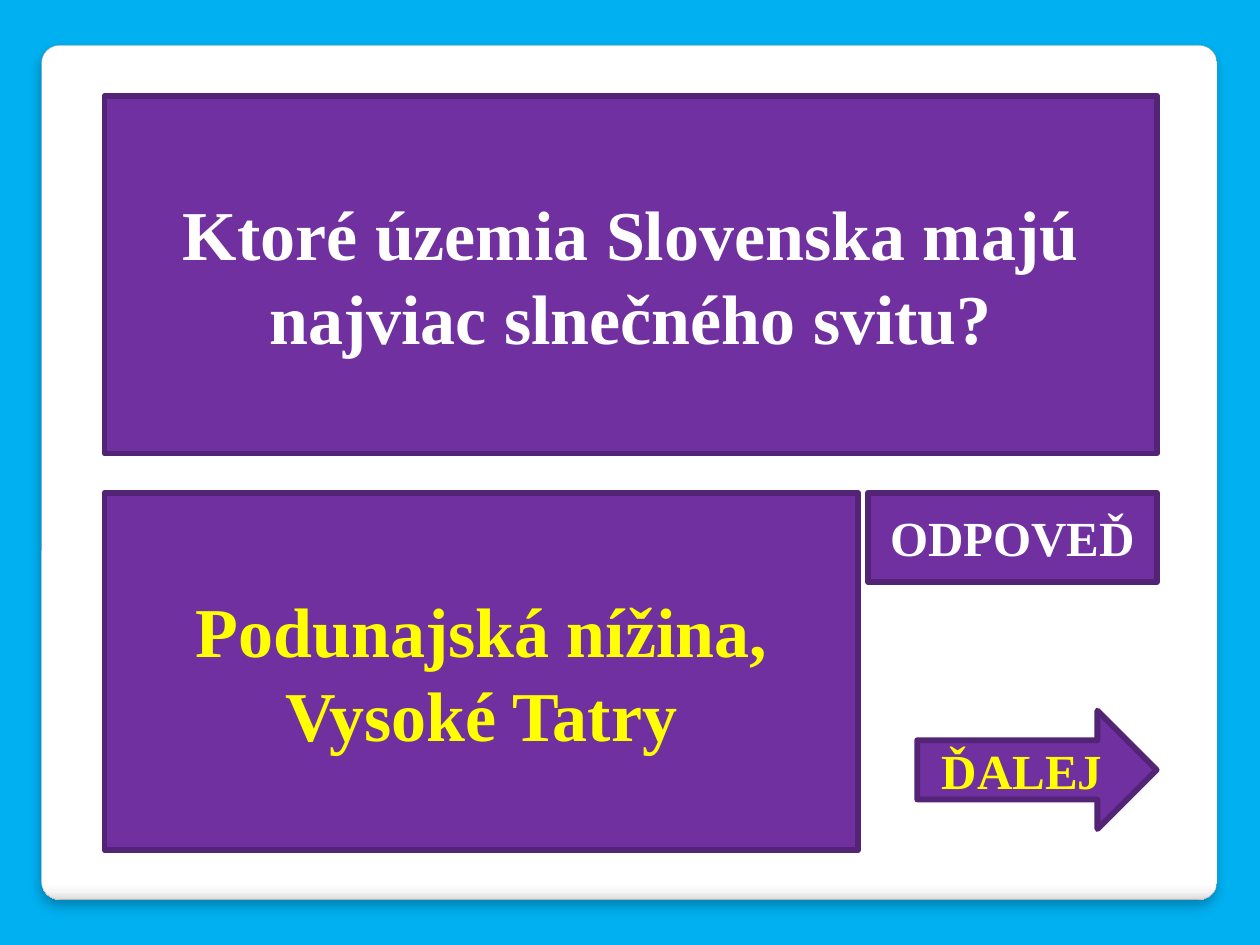
from lxml import etree
from pptx import Presentation
from pptx import util as u
from pptx.dml.color import RGBColor
from pptx.enum import shapes, text
from pptx.oxml.ns import qn

SKY = RGBColor(0x00, 0xB0, 0xF0)
PURPLE = RGBColor(0x70, 0x30, 0xA0)
DARK_PURPLE = RGBColor(0x53, 0x24, 0x76)
WHITE = RGBColor(0xFF, 0xFF, 0xFF)
YELLOW = RGBColor(0xFF, 0xFF, 0x00)
GRAY = RGBColor(0xA4, 0xA4, 0xA4)
BLACK = RGBColor(0x00, 0x00, 0x00)
PALE = RGBColor(0xF7, 0xF7, 0xF7)
SILVER = RGBColor(0xDA, 0xDA, 0xDA)

LEFT, RIGHT = 0.83, 9.18
QUESTION_TOP, ANSWER_TOP, BOX_HEIGHT = 0.76, 3.91, 2.84


def write_text(shape, content, size=40, color=WHITE, font="Times New Roman", bold=True):
    frame = shape.text_frame
    frame.word_wrap = True
    frame.vertical_anchor = text.MSO_ANCHOR.MIDDLE
    paragraph = frame.paragraphs[0]
    paragraph.alignment = text.PP_ALIGN.CENTER
    run = paragraph.add_run()
    run.text = content
    run.font.name = font
    run.font.size = u.Pt(size)
    run.font.bold = bold
    run.font.color.rgb = color


def add_color(parent, color):
    return etree.SubElement(parent, qn("a:srgbClr"), val=str(color))


class QuizSlide:
    def __init__(self, presentation, background):
        self.slide = presentation.slides.add_slide(presentation.slide_layouts[6])
        fill = self.slide.background.fill
        fill.solid()
        fill.fore_color.rgb = background

    def shape(self, kind, left, top, width, height, line, line_width):
        shape = self.slide.shapes.add_shape(
            kind, u.Inches(left), u.Inches(top), u.Inches(width), u.Inches(height)
        )
        shape.shadow.inherit = False
        shape.line.color.rgb = line
        shape.line.width = u.Pt(line_width)
        return shape

    def panel(self, left, top, width, height, stops):
        shape = self.shape(
            shapes.MSO_SHAPE.ROUNDED_RECTANGLE, left, top, width, height, GRAY, 0.16
        )
        shape.adjustments[0] = 0.021
        shape.fill.gradient()
        shape.fill.gradient_angle = 270
        properties = shape._element.spPr
        stop_list = properties.find(".//" + qn("a:gsLst"))
        for stop in list(stop_list):
            stop_list.remove(stop)
        for position, color in stops:
            add_color(
                etree.SubElement(stop_list, qn("a:gs"), pos=str(position * 1000)), color
            )
        shadow = etree.SubElement(
            properties.find(qn("a:effectLst")),
            qn("a:outerShdw"),
            blurRad=str(u.Pt(6)),
            dist=str(u.Pt(4)),
            dir="5400000",
            algn="ctr",
            rotWithShape="0",
        )
        etree.SubElement(add_color(shadow, BLACK), qn("a:alpha"), val="25000")

    def box(self, content, left, top, width, height,
            kind=shapes.MSO_SHAPE.RECTANGLE, **text_format):
        shape = self.shape(kind, left, top, width, height, DARK_PURPLE, 3.35)
        shape.fill.solid()
        shape.fill.fore_color.rgb = PURPLE
        write_text(shape, content, **text_format)


def main():
    presentation = Presentation()
    presentation.slide_width = u.Inches(10)
    presentation.slide_height = u.Inches(7.5)
    quiz = QuizSlide(presentation, SKY)
    quiz.panel(0.33, 0.36, 9.33, 6.78,
               [(0, WHITE), (98, WHITE), (99, PALE), (100, SILVER)])
    quiz.box("Ktoré územia Slovenska majú najviac slnečného svitu?",
             LEFT, QUESTION_TOP, RIGHT - LEFT, BOX_HEIGHT)
    quiz.box("Podunajská nížina, Vysoké Tatry",
             LEFT, ANSWER_TOP, 5.98, BOX_HEIGHT, color=YELLOW)
    quiz.box("ODPOVEĎ", 6.89, ANSWER_TOP, RIGHT - 6.89, 0.71, size=28)
    quiz.box("ĎALEJ", 7.28, 5.64, RIGHT - 7.28, 0.94,
             kind=shapes.MSO_SHAPE.RIGHT_ARROW, size=28, color=YELLOW)
    presentation.save("out.pptx")


if __name__ == "__main__":
    main()
